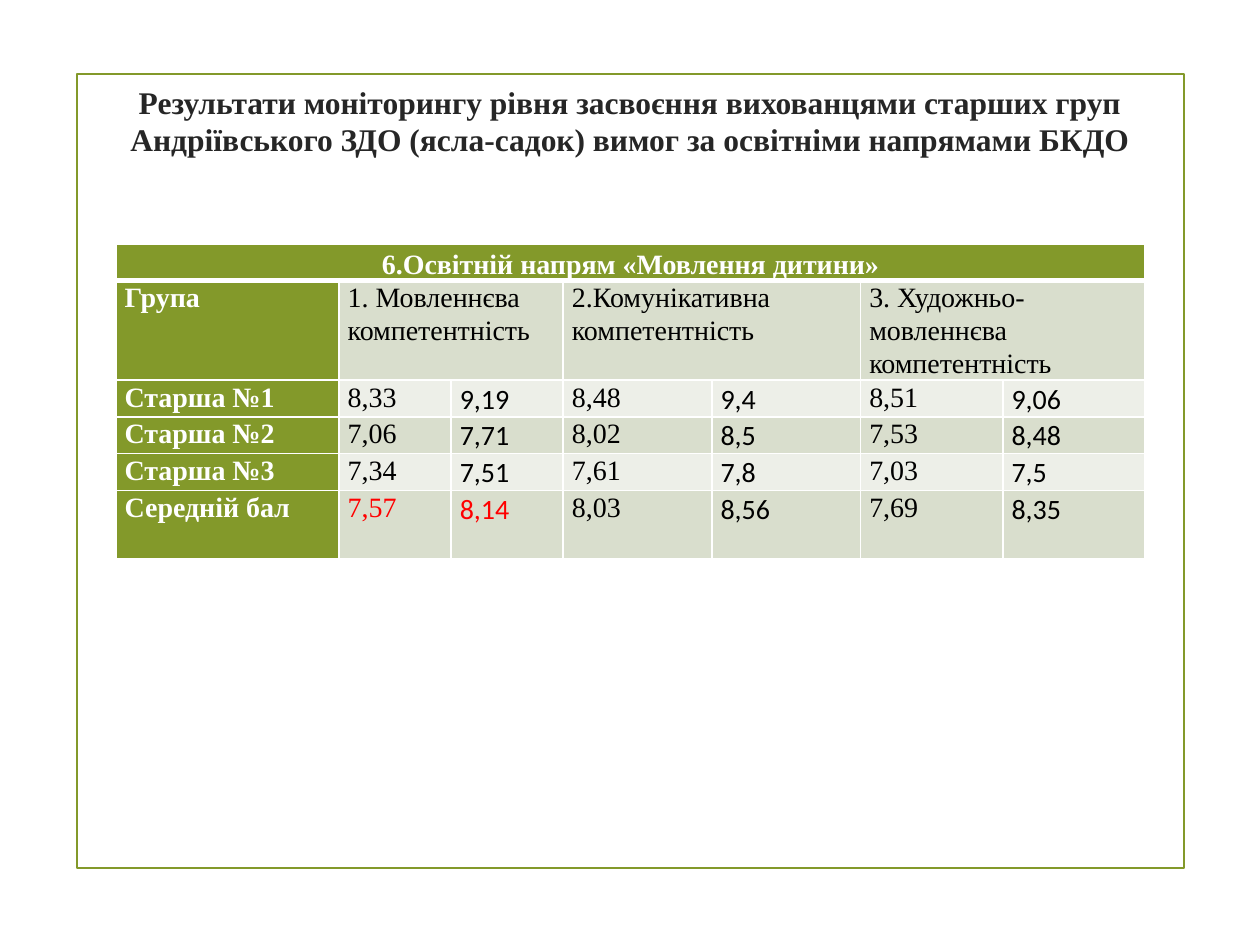
from dataclasses import dataclass

import pptx
import pptx.dml.color
import pptx.enum.shapes
import pptx.enum.text
import pptx.oxml
import pptx.oxml.ns
import pptx.util
from pptx.util import Inches

CENTER = pptx.enum.text.PP_ALIGN.CENTER
LEFT = pptx.enum.text.PP_ALIGN.LEFT
MIDDLE = pptx.enum.text.MSO_ANCHOR.MIDDLE
TOP = pptx.enum.text.MSO_ANCHOR.TOP


@dataclass(frozen=True)
class Theme:
    accent: str = "83992A"
    title: str = "262626"
    text: str = "000000"
    light: str = "FFFFFF"
    alert: str = "FF0000"
    bands: tuple = ("D9DECD", "EDEFE8")
    serif: str = "Times New Roman"
    sans: str = "Calibri"
    title_size: int = 18
    table_size: int = 16


THEME = Theme()

TITLE = ("Результати моніторингу рівня засвоєння вихованцями старших груп "
         "Андріївського ЗДО (ясла-садок) вимог за освітніми напрямами БКДО")
SECTION = "6.Освітній напрям «Мовлення дитини»"
GROUP_HEAD = "Група"
COMPETENCES = ["1. Мовленнєва компетентність",
               "2.Комунікативна компетентність",
               "3. Художньо-мовленнєва компетентність"]
SCORES = [
    ["Старша №1", "8,33", "9,19", "8,48", "9,4", "8,51", "9,06"],
    ["Старша №2", "7,06", "7,71", "8,02", "8,5", "7,53", "8,48"],
    ["Старша №3", "7,34", "7,51", "7,61", "7,8", "7,03", "7,5"],
    ["Середній бал", "7,57", "8,14", "8,03", "8,56", "7,69", "8,35"],
]
COL_WIDTHS = [1.77, 0.89, 0.89, 1.18, 1.18, 1.13, 1.13]
ROW_HEIGHTS = [0.27, 0.78, 0.29, 0.29, 0.29, 0.54]


def rgb(value):
    return pptx.dml.color.RGBColor.from_string(value)


def write(tf, text, *, size, color, font=THEME.serif, bold=False, align=LEFT,
          spacing=None, after=None):
    p = tf.paragraphs[0]
    p.alignment = align
    if spacing:
        p.line_spacing = spacing
    if after:
        p.space_after = pptx.util.Pt(after)
    r = p.add_run()
    r.text = text
    r.font.name, r.font.bold = font, bold
    r.font.size = pptx.util.Pt(size)
    r.font.color.rgb = rgb(color)


def set_borders(cell, color, widths):
    """Draw the cell's edges; widths maps L, R, T and B to points."""
    tcPr = cell._tc.get_or_add_tcPr()
    for side, width in widths.items():
        tcPr.append(pptx.oxml.parse_xml(
            f'<a:ln{side} {pptx.oxml.ns.nsdecls("a")} w="{pptx.util.Pt(width)}">'
            f'<a:solidFill><a:srgbClr val="{color}"/></a:solidFill></a:ln{side}>'))


def style_cell(cell, fill, header=False):
    edges = dict.fromkeys("LRTB", 1)
    if header:
        edges["B"] = 3
    set_borders(cell, THEME.light, edges)
    cell.fill.solid()
    cell.fill.fore_color.rgb = rgb(fill)
    cell.margin_left = cell.margin_right = Inches(0.07)
    cell.margin_top = cell.margin_bottom = 0
    cell.vertical_anchor = MIDDLE if header else TOP


def fill_cell(cell, text, **fmt):
    write(cell.text_frame, text,
          **{"size": THEME.table_size, "color": THEME.text,
             "spacing": 1.07, "after": 8, **fmt})


def add_title(s, x, y, w, h):
    title = s.shapes.title
    title.left, title.top, title.width, title.height = map(Inches, (x, y, w, h))
    tf = title.text_frame
    tf.word_wrap = True
    tf.auto_size = pptx.enum.text.MSO_AUTO_SIZE.NONE
    tf.vertical_anchor = MIDDLE
    write(tf, TITLE, size=THEME.title_size, color=THEME.title, bold=True,
          align=CENTER)


def add_frame(s, x, y, w, h):
    """Outline the page, behind the title."""
    sp = s.shapes.add_shape(pptx.enum.shapes.MSO_SHAPE.RECTANGLE,
                            *map(Inches, (x, y, w, h)))
    sp.shadow.inherit = False
    sp.fill.background()
    sp.line.color.rgb = rgb(THEME.accent)
    sp.line.width = pptx.util.Pt(1.25)
    s.shapes.title.element.addprevious(sp.element)


def add_scores(s, x, y, w, h):
    """Place the score table, its columns and rows scaled to the box."""
    rows, cols = len(ROW_HEIGHTS), len(COL_WIDTHS)
    table = s.shapes.add_table(rows, cols, *map(Inches, (x, y, w, h))).table
    for col, width in zip(table.columns, COL_WIDTHS):
        col.width = Inches(w * width / sum(COL_WIDTHS))
    for row, height in zip(table.rows, ROW_HEIGHTS):
        row.height = Inches(h * height / sum(ROW_HEIGHTS))

    for i in range(rows):
        for j in range(cols):
            is_label = i == 0 or j == 0
            style_cell(table.cell(i, j),
                       THEME.accent if is_label else THEME.bands[(i - 1) % 2],
                       header=i == 0)

    label = {"color": THEME.light, "bold": True}
    table.cell(0, 0).merge(table.cell(0, cols - 1))
    fill_cell(table.cell(0, 0), SECTION, align=CENTER, spacing=1.15, **label)
    fill_cell(table.cell(1, 0), GROUP_HEAD, **label)
    for k, name in enumerate(COMPETENCES):
        first = 1 + 2 * k
        table.cell(1, first).merge(table.cell(1, first + 1))
        fill_cell(table.cell(1, first), name)

    for i, (group, *values) in enumerate(SCORES, start=2):
        fill_cell(table.cell(i, 0), group, **label)
        for j, value in enumerate(values, start=1):
            is_alert = i == rows - 1 and j <= 2
            fill_cell(table.cell(i, j), value,
                      font=THEME.serif if j % 2 else THEME.sans,
                      color=THEME.alert if is_alert else THEME.text)


def main():
    prs = pptx.Presentation()
    prs.slide_width, prs.slide_height = Inches(10), Inches(7.5)
    s = prs.slides.add_slide(prs.slide_layouts[5])
    add_title(s, 0.59, 0.52, 8.82, 0.87)
    add_frame(s, 0.61, 0.59, 8.79, 6.3)
    add_scores(s, 0.92, 1.94, 8.17, 2.48)
    prs.save("out.pptx")


if __name__ == "__main__":
    main()
